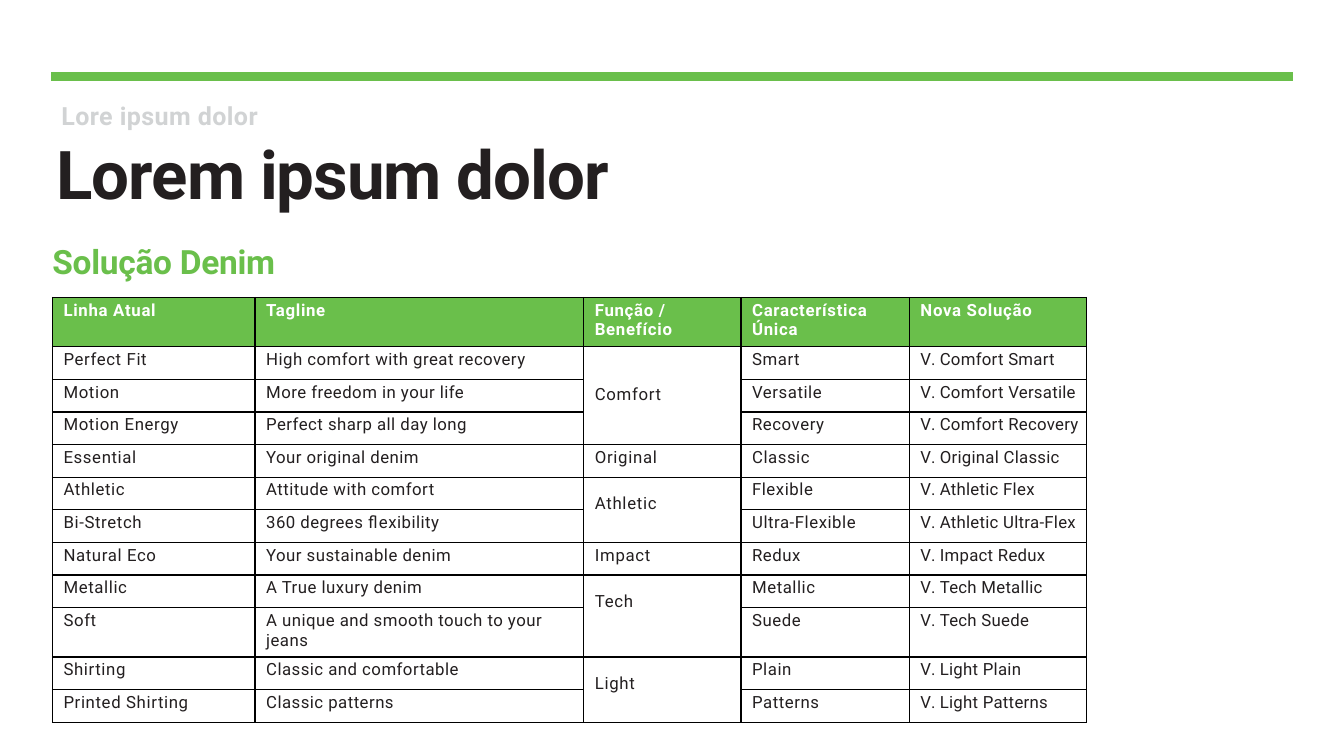
from dataclasses import dataclass

from lxml.etree import SubElement
from pptx import Presentation
from pptx.dml.color import RGBColor
from pptx.enum.shapes import MSO_CONNECTOR
from pptx.enum.text import MSO_ANCHOR, MSO_AUTO_SIZE, PP_ALIGN
from pptx.oxml.ns import qn
from pptx.slide import Slide
from pptx.table import _Cell
from pptx.text.text import TextFrame, _Paragraph
from pptx.util import Inches, Pt

COLORS = {
    "green": "6ABF4B",
    "gray": "D1D3D4",
    "ink": "231F20",
    "white": "FFFFFF",
    "black": "000000",
}
FONT = "Roboto"


@dataclass
class Style:
    size: float
    color: str
    bold: bool
    spacing: float


@dataclass
class Heading:
    text: str
    left: float
    top: float
    width: float
    height: float
    style: Style


@dataclass
class Column:
    header: str
    width: float
    spacing: float


@dataclass
class Benefit:
    row: int
    span: int
    text: str
    top_margin: float


TITLE = Heading("Lorem ipsum dolor", 0.55, 1.3, 6.11, 0.82, Style(48, "ink", True, -0.7))
LABELS = [
    Heading("Lore ipsum dolor", 0.6, 0.99, 3.13, 0.31, Style(17.9, "gray", True, 0.3)),
    Heading("Solução Denim", 0.51, 2.38, 2.71, 0.41, Style(23.9, "green", True, -0.2)),
]
COLUMNS = [
    Column("Linha Atual", 2.01, 0.45),
    Column("Tagline", 3.26, 0.35),
    Column("Função / Benefício", 1.56, 0.5),
    Column("Característica Única", 1.67, 0.4),
    Column("Nova Solução", 1.76, 0.2),
]
BENEFIT_COLUMN = 2
BENEFITS = [
    Benefit(1, 3, "Comfort", 0.38),
    Benefit(4, 1, "Original", 0.03),
    Benefit(5, 2, "Athletic", 0.17),
    Benefit(7, 1, "Impact", 0.03),
    Benefit(8, 2, "Tech", 0.17),
    Benefit(10, 2, "Light", 0.17),
]
PRODUCTS = [
    ("Perfect Fit", "High comfort with great recovery", "Smart", "Comfort Smart"),
    ("Motion", "More freedom in your life", "Versatile", "Comfort Versatile"),
    ("Motion Energy", "Perfect sharp all day long", "Recovery", "Comfort Recovery"),
    ("Essential", "Your original denim", "Classic", "Original Classic"),
    ("Athletic", "Attitude with comfort", "Flexible", "Athletic Flex"),
    ("Bi-Stretch", "360 degrees flexibility", "Ultra-Flexible", "Athletic Ultra-Flex"),
    ("Natural Eco", "Your sustainable denim", "Redux", "Impact Redux"),
    ("Metallic", "A True luxury denim", "Metallic", "Tech Metallic"),
    ("Soft", "A unique and smooth touch to your jeans", "Suede", "Tech Suede"),
    ("Shirting", "Classic and comfortable", "Plain", "Light Plain"),
    ("Printed Shirting", "Classic patterns", "Patterns", "Light Patterns"),
]
TALL_ROWS = (0, 9)
TALL_HEIGHT = Inches(0.49)
ROW_HEIGHT = Inches(3.24) // 10


def add_run(paragraph: _Paragraph, text: str, style: Style) -> None:
    run = paragraph.add_run()
    run.text = text
    run.font.name = FONT
    run.font.size = Pt(style.size)
    run.font.bold = style.bold
    run.font.color.rgb = RGBColor.from_string(COLORS[style.color])
    run._r.get_or_add_rPr().set("spc", str(round(style.spacing * 100)))


def fill_heading(frame: TextFrame, heading: Heading) -> None:
    frame.word_wrap = True
    frame.auto_size = MSO_AUTO_SIZE.NONE
    frame.margin_left = Inches(0.01)
    frame.margin_top = Inches(0.01)
    frame.margin_right = frame.margin_bottom = 0
    paragraph = frame.paragraphs[0]
    paragraph.alignment = PP_ALIGN.LEFT
    add_run(paragraph, heading.text, heading.style)


def add_label(slide: Slide, heading: Heading) -> None:
    shape = slide.shapes.add_textbox(
        Inches(heading.left), Inches(heading.top), Inches(heading.width), Inches(heading.height)
    )
    fill_heading(shape.text_frame, heading)


def place_title(slide: Slide, heading: Heading) -> None:
    title = slide.shapes.title
    title.left, title.top = Inches(heading.left), Inches(heading.top)
    title.width, title.height = Inches(heading.width), Inches(heading.height)
    fill_heading(title.text_frame, heading)
    title.text_frame.vertical_anchor = MSO_ANCHOR.MIDDLE


def add_rule(slide: Slide) -> None:
    rule = slide.shapes.add_connector(
        MSO_CONNECTOR.STRAIGHT, Inches(0.51), Inches(0.76), Inches(12.82), Inches(0.76)
    )
    rule.line.color.rgb = RGBColor.from_string(COLORS["green"])
    rule.line.width = Pt(6)
    SubElement(rule._element.spPr, qn("a:effectLst"))


def format_cell(cell: _Cell, is_header: bool) -> None:
    properties = cell._tc.get_or_add_tcPr()
    for side in ("a:lnL", "a:lnR", "a:lnT", "a:lnB"):
        border = SubElement(properties, qn(side), w=str(Pt(1)))
        solid = SubElement(border, qn("a:solidFill"))
        SubElement(solid, qn("a:srgbClr"), val=COLORS["black"])
    if is_header:
        cell.fill.solid()
        cell.fill.fore_color.rgb = RGBColor.from_string(COLORS["green"])
    else:
        cell.fill.background()
    cell.margin_left = Inches(0.11)
    cell.margin_top = Inches(0.03)
    cell.margin_right = cell.margin_bottom = 0


def add_solution_table(slide: Slide) -> None:
    heights = [
        TALL_HEIGHT if row in TALL_ROWS else ROW_HEIGHT for row in range(len(PRODUCTS) + 1)
    ]
    table = slide.shapes.add_table(
        len(heights), len(COLUMNS), Inches(0.52), Inches(2.95), Inches(10.26), sum(heights)
    ).table
    table.first_row = table.horz_banding = False
    for row, height in enumerate(heights):
        table.rows[row].height = height
        for index in range(len(COLUMNS)):
            format_cell(table.cell(row, index), row == 0)
    for index, column in enumerate(COLUMNS):
        table.columns[index].width = Inches(column.width)
        paragraph = table.cell(0, index).text_frame.paragraphs[0]
        add_run(paragraph, column.header, Style(12, "white", True, 0.5))
    body_styles = [Style(12, "ink", False, column.spacing) for column in COLUMNS]
    for row, (line, tagline, trait, solution) in enumerate(PRODUCTS, start=1):
        for index, text in ((0, line), (1, tagline), (3, trait)):
            add_run(table.cell(row, index).text_frame.paragraphs[0], text, body_styles[index])
        paragraph = table.cell(row, 4).text_frame.paragraphs[0]
        add_run(paragraph, "V", Style(12, "ink", False, -0.9))
        add_run(paragraph, ". ", Style(12, "ink", False, 0))
        add_run(paragraph, solution, body_styles[4])
    for benefit in BENEFITS:
        cell = table.cell(benefit.row, BENEFIT_COLUMN)
        if benefit.span > 1:
            cell.merge(table.cell(benefit.row + benefit.span - 1, BENEFIT_COLUMN))
        cell.margin_top = Inches(benefit.top_margin)
        add_run(cell.text_frame.paragraphs[0], benefit.text, body_styles[BENEFIT_COLUMN])


def main() -> None:
    presentation = Presentation()
    presentation.slide_width = Inches(13.33)
    presentation.slide_height = Inches(7.5)
    slide = presentation.slides.add_slide(presentation.slide_layouts[5])
    add_rule(slide)
    place_title(slide, TITLE)
    for label in LABELS:
        add_label(slide, label)
    add_solution_table(slide)
    presentation.save("out.pptx")


if __name__ == "__main__":
    main()
